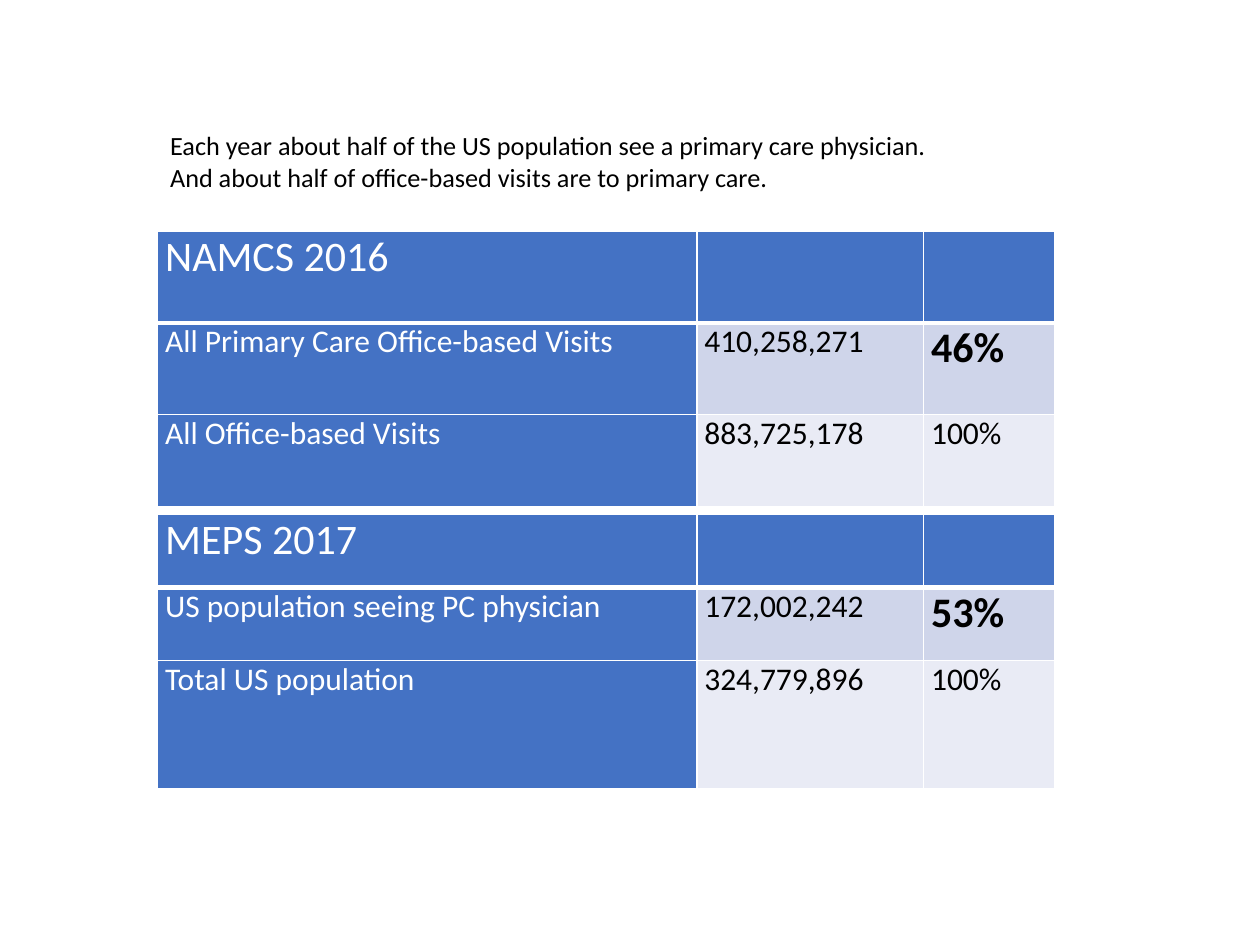
from lxml import etree
from pptx import Presentation
from pptx.dml.color import RGBColor
from pptx.enum.text import MSO_AUTO_SIZE
from pptx.oxml.ns import qn
from pptx.util import Cm, Pt

FIT_SHAPE = MSO_AUTO_SIZE.SHAPE_TO_FIT_TEXT
FONT = "Calibri"
COLORS = {
    "blue": "4472C4",
    "band": "CFD5EA",
    "pale": "E9EBF5",
    "white": "FFFFFF",
    "black": "000000",
}
LEFT = 3.18
COLUMN_WIDTHS = [10.87, 4.57, 2.64]

INTRO = [
    "Each year about half of the US population see a primary care physician.",
    "And about half of office-based visits are to primary care.",
]
VISITS = [
    ["NAMCS 2016", "", ""],
    ["All Primary Care Office-based Visits", "410,258,271", "46%"],
    ["All Office-based Visits", "883,725,178", "100%"],
]
POPULATION = [
    ["MEPS 2017", "", ""],
    ["US population seeing PC physician", "172,002,242", "53%"],
    ["Total US population", "324,779,896", "100%"],
]


def add_span(para, text, size, color, bold=False):
    span = para.add_run()
    span.text = text
    span.font.name = FONT
    span.font.size = Pt(size)
    span.font.bold = bold
    span.font.color.rgb = RGBColor.from_string(COLORS[color])


def add_intro(page):
    box = page.shapes.add_textbox(Cm(LEFT), Cm(2.49), Cm(17.81), Cm(1.55))
    frame = box.text_frame
    frame.word_wrap = True
    frame.auto_size = FIT_SHAPE
    for index, line in enumerate(INTRO):
        para = frame.add_paragraph() if index else frame.paragraphs[0]
        add_span(para, line, 15, "black")


def set_borders(cell, bottom):
    """Draw white cell edges, 1 pt except for the given bottom width."""
    properties = cell._tc.get_or_add_tcPr()
    for side, width in (("L", 1), ("R", 1), ("T", 1), ("B", bottom)):
        line = etree.SubElement(properties, qn(f"a:ln{side}"), w=str(Pt(width)))
        fill = etree.SubElement(line, qn("a:solidFill"))
        etree.SubElement(fill, qn("a:srgbClr"), val=COLORS["white"])


def fill_cell(cell, text, row, column):
    is_header = row == 0
    is_share = row == 1 and column == 2
    is_blue = is_header or column == 0
    cell.margin_left = cell.margin_right = Cm(0.15)
    cell.margin_top = cell.margin_bottom = 0
    set_borders(cell, 3 if is_header else 1)
    background = "blue" if is_blue else ("band" if row == 1 else "pale")
    cell.fill.solid()
    cell.fill.fore_color.rgb = RGBColor.from_string(COLORS[background])
    if text:
        add_span(cell.text_frame.paragraphs[0], text,
                 24 if is_header or is_share else 18,
                 "white" if is_blue else "black", is_share)


def add_survey_table(page, top, row_heights, rows):
    frame = page.shapes.add_table(
        len(rows), len(COLUMN_WIDTHS), Cm(LEFT), Cm(top),
        Cm(sum(COLUMN_WIDTHS)), Cm(sum(row_heights)))
    table = frame.table
    for column, width in zip(table.columns, COLUMN_WIDTHS):
        column.width = Cm(width)
    for row, height in zip(table.rows, row_heights):
        row.height = Cm(height)
    for row, texts in enumerate(rows):
        for column, text in enumerate(texts):
            fill_cell(table.cell(row, column), text, row, column)


def main():
    deck = Presentation()
    deck.slide_width, deck.slide_height = Cm(25.4), Cm(19.05)
    page = deck.slides.add_slide(deck.slide_layouts[6])
    add_survey_table(page, 10.37, [1.47, 1.47, 2.6], POPULATION)
    add_survey_table(page, 4.66, [1.85] * 3, VISITS)
    add_intro(page)
    deck.save("out.pptx")


if __name__ == "__main__":
    main()
